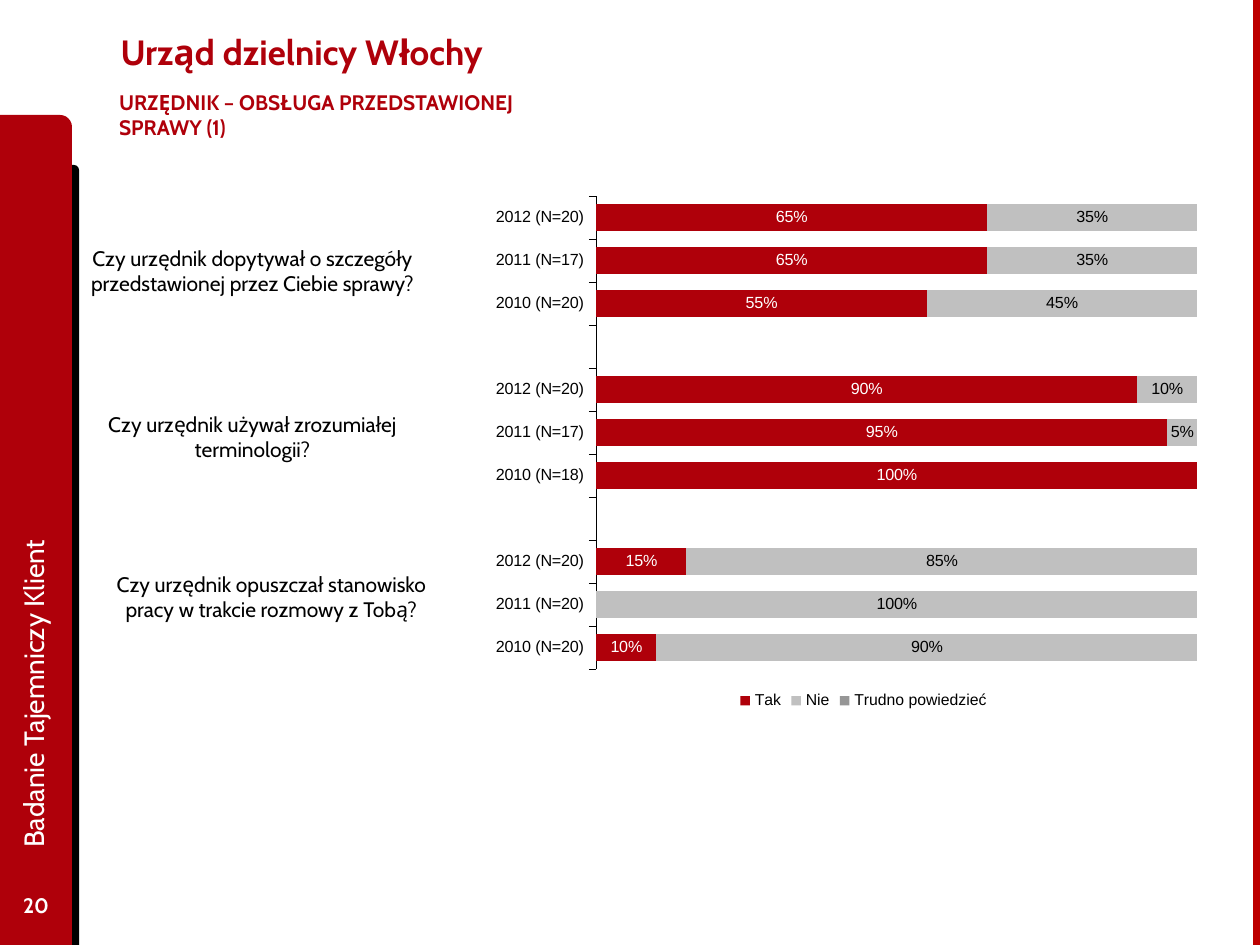
"""Build the mystery-client slide with stacked bars on how officials handled a case."""
from lxml import etree
from pptx import Presentation
from pptx import util as u
from pptx.chart import data
from pptx.dml.color import RGBColor
from pptx.enum import chart as charts
from pptx.enum import shapes, text
from pptx.oxml import ns

SCALE = u.Inches(1) / 126
THEME = {
    "red": RGBColor.from_string("AF000A"),
    "edge": RGBColor.from_string("BD0000"),
    "black": RGBColor.from_string("000000"),
    "white": RGBColor.from_string("FFFFFF"),
    "silver": RGBColor.from_string("C0C0C0"),
    "gray": RGBColor.from_string("969696"),
    "title": {"name": "Cabin", "size": u.Pt(20), "bold": True},
    "strong": {"name": "Cabin", "size": u.Pt(12), "bold": True},
    "body": {"name": "Cabin", "size": u.Pt(12), "bold": False},
    "side": {"name": "Cabin", "size": u.Pt(16), "bold": False},
    "chart": {"name": "Arial", "size": u.Pt(9.2), "bold": False},
    "legend": {"name": "Arial", "size": u.Pt(9), "bold": False},
}


def px(*lengths):
    return [round(length * SCALE) for length in lengths]


def style(font, kind, color):
    for key, value in THEME[kind].items():
        setattr(font, key, value)
    font.color.rgb = THEME[color]


presentation = Presentation()
presentation.slide_width, presentation.slide_height = px(1260, 945)
slide = presentation.slides.add_slide(presentation.slide_layouts[5])

panels = [
    (shapes.MSO_SHAPE.ROUND_1_RECTANGLE, (49, 165, 30, 780), "black"),
    (shapes.MSO_SHAPE.ROUND_1_RECTANGLE, (0, 115, 72, 830), "red"),
    (shapes.MSO_SHAPE.RECTANGLE, (1253, 0, 7, 945), "edge"),
]
for preset, box, color in panels:
    shape = slide.shapes.add_shape(preset, *px(*box))
    shape.shadow.inherit = False
    shape.fill.solid()
    shape.fill.fore_color.rgb = THEME[color]
    shape.line.fill.background()

title = slide.shapes.title
title.left, title.top, title.width, title.height = px(108, 6, 979, 91)
title.text_frame.text = "Urząd dzielnicy Włochy"
title.text_frame.vertical_anchor = text.MSO_ANCHOR.MIDDLE
paragraph = title.text_frame.paragraphs[0]
paragraph.alignment = text.PP_ALIGN.LEFT
style(paragraph.font, "title", "red")

left, center = text.PP_ALIGN.LEFT, text.PP_ALIGN.CENTER
top, middle = text.MSO_ANCHOR.TOP, text.MSO_ANCHOR.MIDDLE
inset, = px(25)
subtitle_frame = {"word_wrap": False, "margin_left": inset, "margin_right": inset}
labels = [
    ("URZĘDNIK – OBSŁUGA PRZEDSTAWIONEJ SPRAWY (1)", (94, 83, 485, 42),
     "strong", "red", left, top, 0, subtitle_frame),
    ("Czy urzędnik dopytywał o szczegóły przedstawionej przez Ciebie sprawy?",
     (49, 239, 407, 63), "body", "black", center, top, 0, {}),
    ("Czy urzędnik używał zrozumiałej terminologii?",
     (49, 405, 407, 63), "body", "black", center, top, 0, {}),
    ("Czy urzędnik opuszczał stanowisko pracy w trakcie rozmowy z Tobą?",
     (87, 565, 369, 63), "body", "black", center, top, 0, {}),
    ("20", (0, 880, 72, 50), "strong", "white", center, middle, 0, {}),
    ("Badanie Tajemniczy Klient", (-330, 465, 726, 64),
     "side", "white", left, middle, 270, {}),
]
for words, box, kind, color, alignment, anchor, rotation, extra in labels:
    shape = slide.shapes.add_textbox(*px(*box))
    shape.rotation = rotation
    frame = shape.text_frame
    for key, value in {"word_wrap": True, "vertical_anchor": anchor, **extra}.items():
        setattr(frame, key, value)
    frame.text = words
    paragraph = frame.paragraphs[0]
    paragraph.alignment = alignment
    style(paragraph.font, kind, color)

chart_data = data.CategoryChartData(number_format="0%")
chart_data.categories = [
    "2012 (N=20)", "2011 (N=17)", "2010 (N=20)", "",
    "2012 (N=20)", "2011 (N=17)", "2010 (N=18)", "",
    "2012 (N=20)", "2011 (N=20)", "2010 (N=20)",
]
answers = [
    ("Tak", [0.65, 0.65, 0.55, None, 0.9, 0.95, 1, None, 0.15, None, 0.1], "red", "white"),
    ("Nie", [0.35, 0.35, 0.45, None, 0.1, 0.05, None, None, 0.85, 1, 0.9], "silver", "black"),
    ("Trudno powiedzieć", [None] * 11, "gray", "black"),
]
for name, values, *_ in answers:
    chart_data.add_series(name, values)
chart = slide.shapes.add_chart(
    charts.XL_CHART_TYPE.BAR_STACKED, *px(485, 195, 757, 520), chart_data).chart
chart.has_title = False
style(chart.font, "chart", "black")

plot = chart.plots[0]
for key, value in {"gap_width": 60, "overlap": 100, "vary_by_categories": False}.items():
    setattr(plot, key, value)
for series, (_, _, fill, label) in zip(plot.series, answers):
    series.format.fill.solid()
    series.format.fill.fore_color.rgb = THEME[fill]
    values = {"show_value": True, "number_format": "0%", "number_format_is_linked": False,
              "position": charts.XL_LABEL_POSITION.CENTER}
    for key, value in values.items():
        setattr(series.data_labels, key, value)
    style(series.data_labels.font, "chart", label)

category_axis = chart.category_axis
category_axis.reverse_order = True
category_axis.major_tick_mark = charts.XL_TICK_MARK.OUTSIDE
category_axis.format.line.color.rgb = THEME["black"]
category_axis.format.line.width = u.Pt(0.23)
style(category_axis.tick_labels.font, "chart", "black")
axis_format = {"minimum_scale": 0, "maximum_scale": 1, "major_unit": 0.2,
               "has_major_gridlines": False, "visible": False}
for key, value in axis_format.items():
    setattr(chart.value_axis, key, value)

chart.has_legend = True
chart.legend.position = charts.XL_LEGEND_POSITION.BOTTOM
chart.legend.include_in_layout = False
style(chart.legend.font, "legend", "black")

plot_area = chart.element.find(".//" + ns.qn("c:plotArea"))
for old in plot_area.findall(ns.qn("c:layout")):
    plot_area.remove(old)
layout = etree.Element(ns.qn("c:layout"))
manual = etree.SubElement(layout, ns.qn("c:manualLayout"))
settings = {"layoutTarget": "inner", "xMode": "edge", "yMode": "edge",
            "x": 0.147, "y": 0.002, "w": 0.794, "h": 0.91}
for tag, value in settings.items():
    etree.SubElement(manual, ns.qn("c:" + tag)).set("val", str(value))
plot_area.insert(0, layout)

presentation.save("out.pptx")
